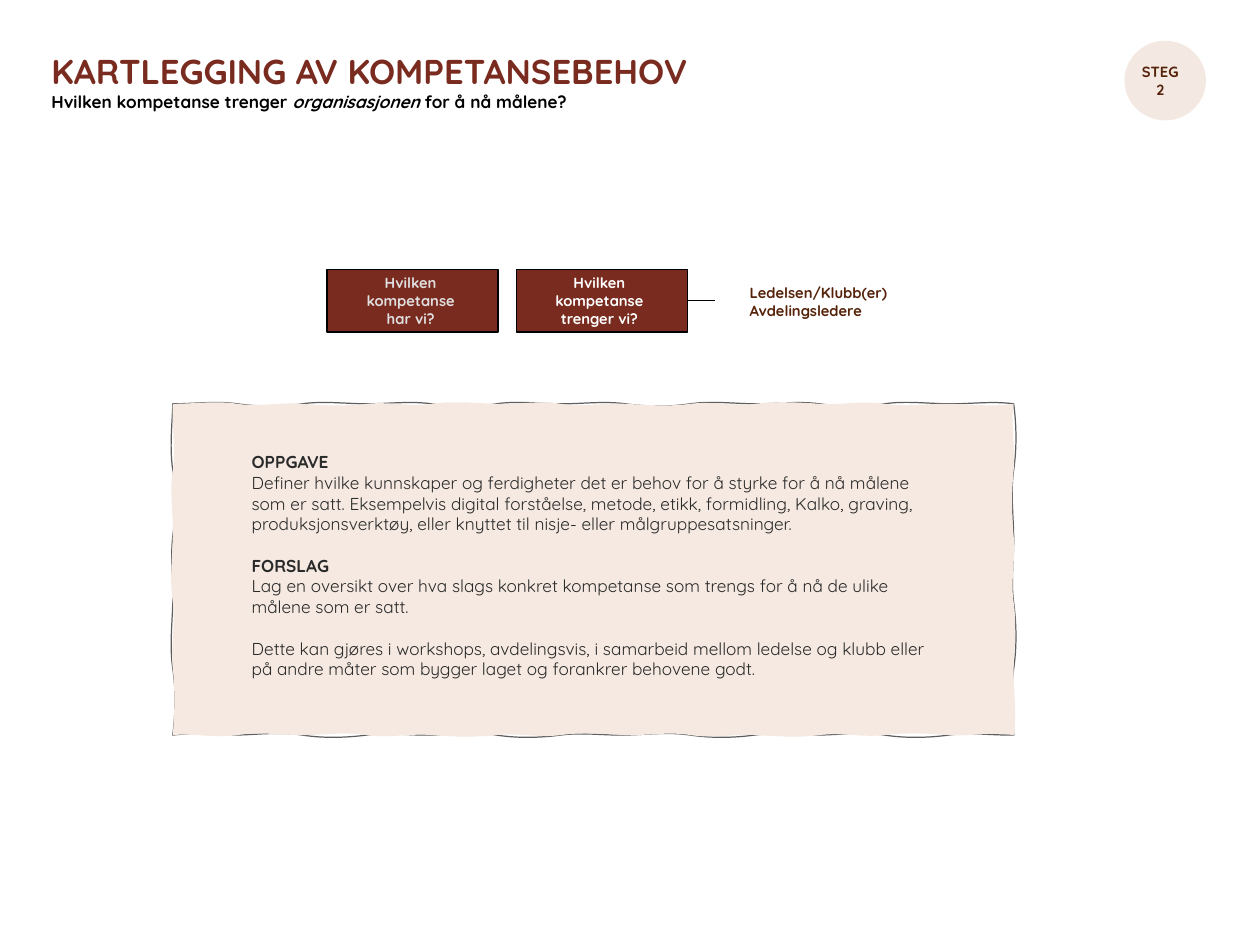
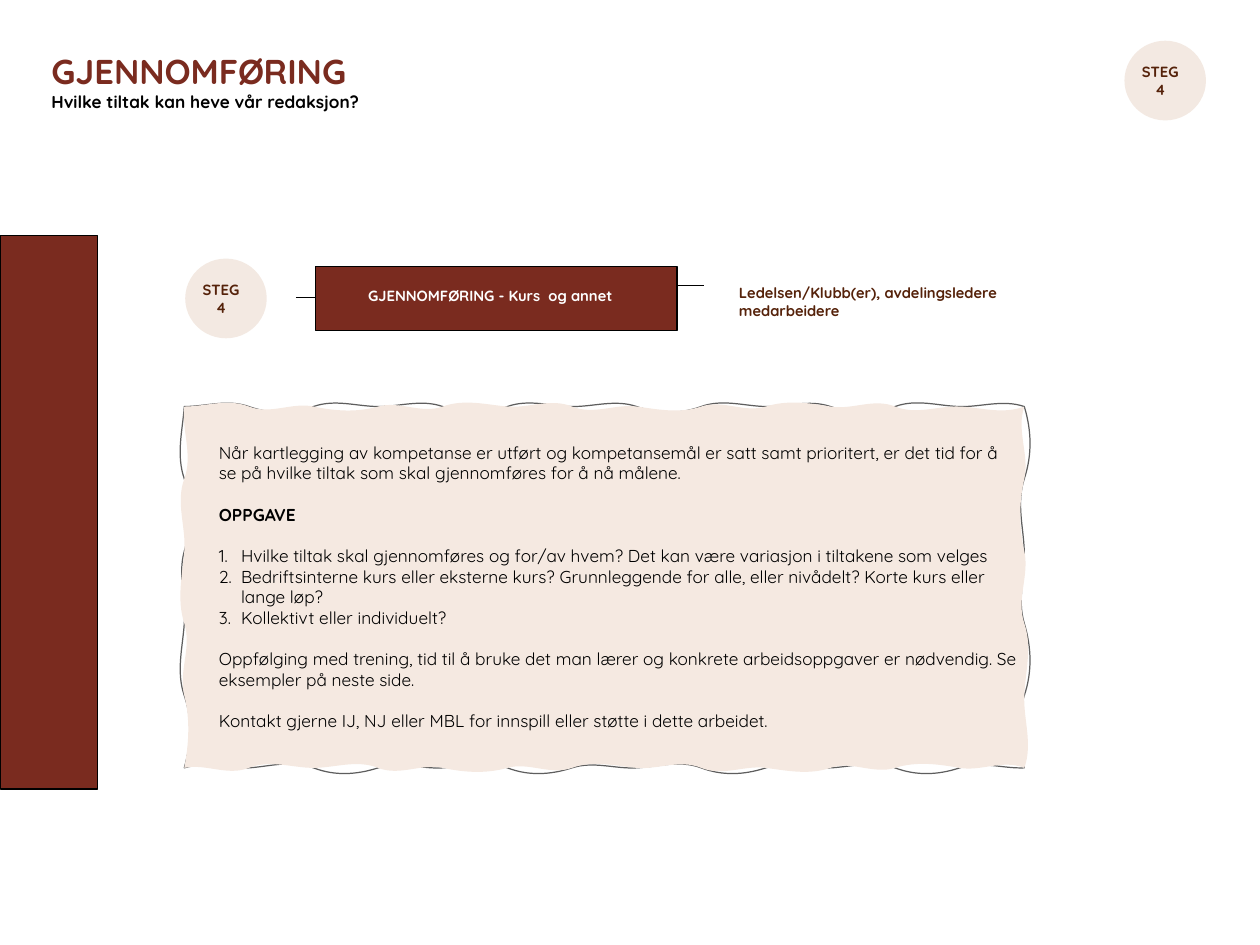
import copy
import math

import pptx
import pptx.dml.color
import pptx.enum.shapes
import pptx.enum.text
import pptx.oxml.ns
import pptx.util
from lxml import etree

Inches = pptx.util.Inches
Pt = pptx.util.Pt
qn = pptx.oxml.ns.qn
SHAPE = pptx.enum.shapes.MSO_SHAPE
ANCHOR = pptx.enum.text.MSO_ANCHOR
ALIGN = pptx.enum.text.PP_ALIGN

FONT = "Quicksand"
COLORS = {
    "rust": "7A2B1F",
    "brown": "55220A",
    "circle": "F3E9E2",
    "panel": "F5E9E1",
    "sketch": "5E5E5E",
    "text": "2A2A2A",
    "muted": "DFDFDF",
    "black": "000000",
    "white": "FFFFFF",
}
PARAGRAPH_GAP = 16.8
CURVES_ACROSS, CURVES_DOWN = 13, 5


def rgb(name):
    return pptx.dml.color.RGBColor.from_string(COLORS[name])


def style(paragraph, size, color, bold=False):
    for run in paragraph.runs:
        run.font.name = FONT
        run.font.size = Pt(size)
        run.font.bold = bold
        run.font.color.rgb = rgb(color)


def place(shape, left, top, width, height):
    shape.left, shape.top = Inches(left), Inches(top)
    shape.width, shape.height = Inches(width), Inches(height)


def set_frame(frame, anchor, left=0, right=0, bottom=0):
    frame.word_wrap = True
    frame.auto_size = pptx.enum.text.MSO_AUTO_SIZE.NONE
    frame.vertical_anchor = anchor
    frame.margin_left, frame.margin_top = Inches(left), 0
    frame.margin_right, frame.margin_bottom = Inches(right), Inches(bottom)


def paint(shape, fill, line=None):
    shape.shadow.inherit = False
    shape.fill.solid()
    shape.fill.fore_color.rgb = rgb(fill)
    if line:
        shape.line.color.rgb = rgb(line)
        shape.line.width = Pt(1)
    else:
        shape.line.fill.background()


def add_heading(slide, title, subtitle, italic_word=None):
    heading = slide.shapes.title
    place(heading, 0.52, 0.5, 11, 0.82)
    frame = heading.text_frame
    set_frame(frame, ANCHOR.MIDDLE, left=0.06)
    frame.text = title + "\n" + subtitle
    title_line, question = frame.paragraphs
    if italic_word:
        before, after = subtitle.split(italic_word)
        question.text = before
        for part in (italic_word, after):
            question.add_run().text = part
    style(title_line, 28, "rust", bold=True)
    style(question, 14, "black", bold=True)
    for run in question.runs:
        run.font.italic = run.text == italic_word
    for paragraph in frame.paragraphs:
        paragraph.alignment = ALIGN.LEFT


def add_step(slide, number, left, top):
    circle = slide.shapes.add_shape(
        SHAPE.OVAL, Inches(left), Inches(top), Inches(0.92), Inches(0.9))
    paint(circle, "circle")
    frame = circle.text_frame
    set_frame(frame, ANCHOR.MIDDLE, left=0.03, right=0.14)
    frame.text = f"STEG {number}"
    frame.paragraphs[0].alignment = ALIGN.CENTER
    style(frame.paragraphs[0], 12, "brown", bold=True)


def add_link(slide, start, end, y):
    link = slide.shapes.add_connector(
        pptx.enum.shapes.MSO_CONNECTOR.STRAIGHT,
        Inches(start), Inches(y), Inches(end), Inches(y))
    link.line.color.rgb = rgb("black")
    link.line.width = Pt(1)
    etree.SubElement(link._element.spPr, qn("a:effectLst"))


def add_box(slide, box, text="", color="white", right=0.08, bottom=0):
    block = slide.shapes.add_shape(SHAPE.RECTANGLE, *map(Inches, box))
    paint(block, "rust", "black")
    if text:
        frame = block.text_frame
        set_frame(frame, ANCHOR.MIDDLE, right=right, bottom=bottom)
        paragraph = frame.paragraphs[0]
        paragraph.text = text
        paragraph.alignment = ALIGN.CENTER
        style(paragraph, 12, color, bold=True)


def add_responsible(slide, left, text):
    label = slide.shapes.add_textbox(
        Inches(left), Inches(3.14), Inches(3.07), Inches(0.53))
    frame = label.text_frame
    set_frame(frame, ANCHOR.MIDDLE, left=0.06)
    frame.text = text
    for paragraph in frame.paragraphs:
        style(paragraph, 12, "brown", bold=True)


def edge_points(left, top, width, height):
    """Evenly spaced points clockwise round the box, back to the start."""
    right, bottom = left + width, top + height
    corners = [(left, top), (right, top), (right, bottom), (left, bottom)]
    points = []
    for side, (x0, y0) in enumerate(corners):
        x1, y1 = corners[(side + 1) % 4]
        count = CURVES_DOWN if side % 2 else CURVES_ACROSS
        points += [(Inches(x0 + (x1 - x0) * i / count),
                    Inches(y0 + (y1 - y0) * i / count)) for i in range(count)]
    return points + points[:1]


def bend(path, swing, pace):
    """Turn the straight pieces of a path into curves that sway smoothly."""
    start = path.find(qn("a:moveTo"))[0]
    for i, piece in enumerate(path.findall(qn("a:lnTo"))):
        end = piece[0]
        x0, y0, x1, y1 = (int(pt.get(axis)) for pt in (start, end) for axis in "xy")
        curve = etree.Element(qn("a:cubicBezTo"))
        for part, sway in ((1 / 3, math.sin(pace * i)),
                           (2 / 3, -math.sin(pace * (i + 1)))):
            offset = Inches(swing) * sway
            x, y = x0 + (x1 - x0) * part, y0 + (y1 - y0) * part
            if x0 == x1:
                x += offset
            else:
                y += offset
            etree.SubElement(curve, qn("a:pt"), x=str(round(x)), y=str(round(y)))
        curve.append(copy.copy(end))
        path.replace(piece, curve)
        start = end


def add_panel(slide, box, swing):
    points = edge_points(*box)
    builder = slide.shapes.build_freeform(*points[0])
    builder.add_line_segments(points[1:], close=True)
    panel = builder.convert_to_shape()
    paint(panel, "panel", "sketch")
    # A sketched outline below, a plain fill above
    outline = panel._element.find(".//" + qn("a:path"))
    filling = copy.deepcopy(outline)
    outline.addnext(filling)
    outline.set("fill", "none")
    filling.set("stroke", "0")
    bend(outline, swing, 2.1)
    bend(filling, swing, 1.3)


def set_bullet(paragraph, numbered):
    properties = paragraph._p.get_or_add_pPr()
    indent = Inches(0.25) if numbered else 0
    properties.set("marL", str(indent))
    properties.set("indent", str(-indent))
    tag = "a:buAutoNum" if numbered else "a:buNone"
    bullet = etree.SubElement(properties, qn(tag))
    if numbered:
        bullet.set("type", "arabicPeriod")


def add_task(slide, panel, pad_x, pad_y, width, color, items):
    """Items are (kind, gap before, text); kind is head, text or number."""
    body = slide.placeholders[1]
    place(body, panel[0] + pad_x, panel[1] + pad_y, width, panel[3] - pad_y - 0.1)
    slide.shapes._spTree.append(body._element)  # in front of the panel
    frame = body.text_frame
    set_frame(frame, ANCHOR.TOP)
    frame.text = "\n".join(text for _, _, text in items)
    for paragraph, (kind, gap, _) in zip(frame.paragraphs, items):
        paragraph.space_before = Pt(PARAGRAPH_GAP if gap else 0)
        set_bullet(paragraph, kind == "number")
        style(paragraph, 14, color, bold=kind == "head")


def new_slide(deck, step, *heading):
    slide = deck.slides.add_slide(deck.slide_layouts[1])
    add_heading(slide, *heading)
    add_step(slide, step, 12.69, 0.46)
    return slide


def build_needs(deck):
    slide = new_slide(
        deck, 2, "KARTLEGGING AV KOMPETANSEBEHOV",
        "Hvilken kompetanse trenger organisasjonen for å nå målene?",
        "organisasjonen")
    # Questions and who answers them
    add_link(slide, 7.23, 8.07, 3.39)
    questions = [("har vi?", "muted", 0.04), ("trenger vi?", "white", 0.06)]
    for column, (ending, color, right) in enumerate(questions):
        add_box(slide, (3.69 + 2.14 * column, 3.04, 1.93, 0.71),
                "Hvilken\nkompetanse\n" + ending, color, right)
    add_responsible(slide, 8.4, "Ledelsen/Klubb(er)\nAvdelingsledere")
    # Task
    panel = (1.95, 4.56, 9.49, 3.74)
    add_panel(slide, panel, 0.04)
    add_task(slide, panel, 0.89, 0.54, 7.71, "text", [
        ("head", False, "OPPGAVE"),
        ("text", False, "Definer hvilke kunnskaper og ferdigheter det er behov "
         "for å styrke for å nå målene som er satt. Eksempelvis digital "
         "forståelse, metode, etikk, formidling, Kalko, graving, "
         "produksjonsverktøy, eller knyttet til nisje- eller "
         "målgruppesatsninger."),
        ("head", True, "FORSLAG"),
        ("text", False, "Lag en oversikt over hva slags konkret kompetanse som "
         "trengs for å nå de ulike målene som er satt."),
        ("text", True, "Dette kan gjøres i workshops, avdelingsvis, i samarbeid "
         "mellom ledelse og klubb eller på andre måter som bygger laget og "
         "forankrer behovene godt."),
    ])


def build_measures(deck):
    slide = new_slide(deck, 4, "GJENNOMFØRING",
                      "Hvilke tiltak kan heve vår redaksjon?")
    # Side band
    add_box(slide, (0.01, 2.66, 1.09, 6.25))
    # Step, activity and who takes part
    add_step(slide, 4, 2.09, 2.92)
    add_link(slide, 3.34, 4.13, 3.36)
    add_link(slide, 7.11, 7.95, 3.22)
    add_box(slide, (3.56, 3.01, 4.08, 0.72), "GJENNOMFØRING - Kurs  og annet",
            right=0.13, bottom=0.06)
    add_responsible(slide, 8.28,
                    "Ledelsen/Klubb(er), avdelingsledere\nmedarbeidere")
    # Task
    panel = (2.08, 4.59, 9.48, 4.08)
    add_panel(slide, panel, 0.1)
    add_task(slide, panel, 0.39, 0.4, 9.03, "black", [
        ("text", False, "Når kartlegging av kompetanse er utført og "
         "kompetansemål er satt samt prioritert, er det tid for å se på hvilke "
         "tiltak som skal gjennomføres for å nå målene."),
        ("head", True, "OPPGAVE"),
        ("number", True, "Hvilke tiltak skal gjennomføres og for/av hvem? Det "
         "kan være variasjon i tiltakene som velges"),
        ("number", False, "Bedriftsinterne kurs eller eksterne kurs? "
         "Grunnleggende for alle, eller nivådelt? Korte kurs eller lange løp?"),
        ("number", False, "Kollektivt eller individuelt?"),
        ("text", True, "Oppfølging med trening, tid til å bruke det man lærer "
         "og konkrete arbeidsoppgaver er nødvendig. Se eksempler på neste side."),
        ("text", True, "Kontakt gjerne IJ, NJ eller MBL for innspill eller "
         "støtte i dette arbeidet."),
    ])


def main():
    deck = pptx.Presentation()
    deck.slide_width, deck.slide_height = Inches(14.22), Inches(10.67)
    build_needs(deck)
    build_measures(deck)
    deck.save("out.pptx")


if __name__ == "__main__":
    main()
